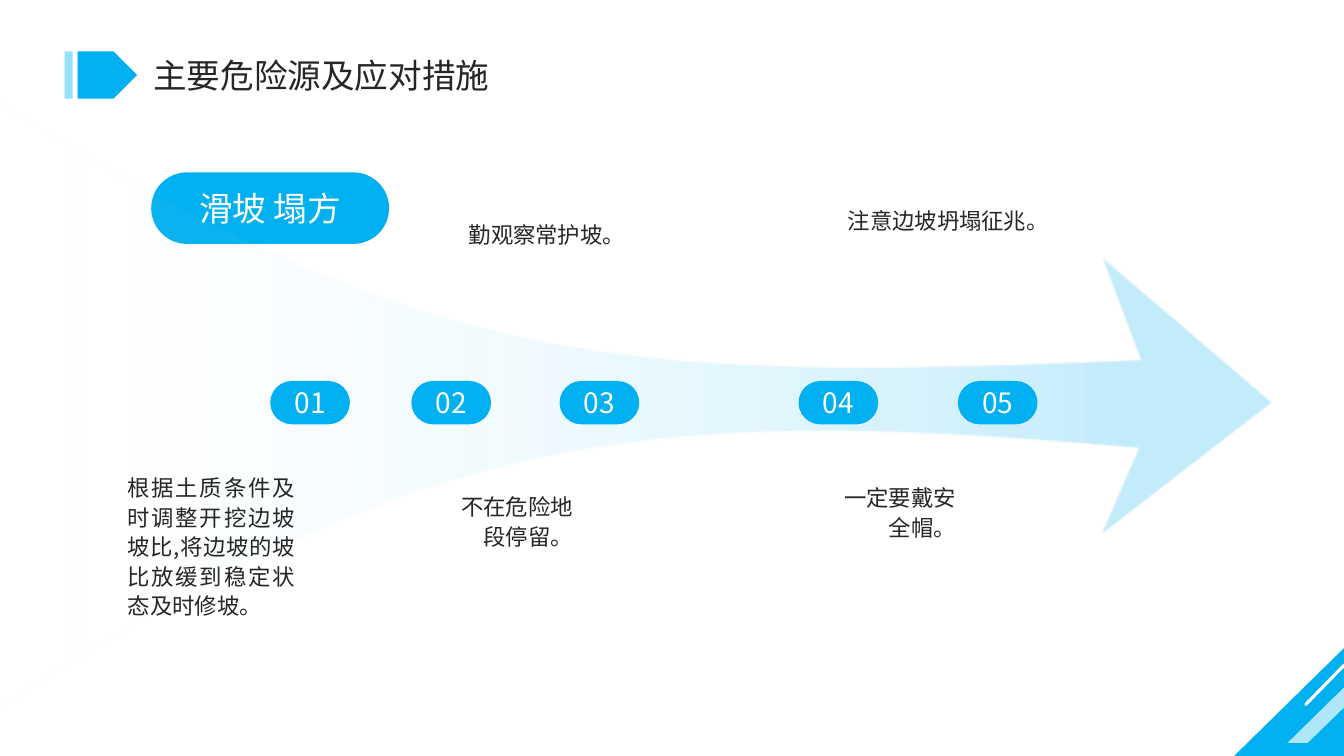
"""Builds the slide on landslide hazards and their countermeasures."""
from lxml.etree import SubElement
from pptx import Presentation
from pptx.dml.color import RGBColor
from pptx.enum.shapes import MSO_CONNECTOR, MSO_SHAPE as SHAPE
from pptx.enum.text import MSO_ANCHOR as ANCHOR, MSO_AUTO_SIZE as AUTO_SIZE, PP_ALIGN as ALIGN
from pptx.oxml.ns import qn
from pptx.util import Inches, Pt

FONT = "Noto Sans CJK SC"
BLUE, PALE_BLUE, WHITE, DARK = "00B0F0", "93E2FF", "FFFFFF", "262626"


def paint(shape, color):
    shape.shadow.inherit = False
    shape.fill.solid()
    shape.fill.fore_color.rgb = RGBColor.from_string(color)
    shape.line.fill.background()


def write(shape, text, size, color, align, anchor=ANCHOR.TOP, spacing=1.0):
    frame = shape.text_frame
    frame.text = text
    frame.word_wrap = True
    frame.vertical_anchor = anchor
    frame.auto_size = AUTO_SIZE.NONE
    paragraph = frame.paragraphs[0]
    paragraph.alignment = align
    paragraph.line_spacing = spacing
    run = paragraph.runs[0]
    run.font.size = Pt(size)
    run.font.name = FONT
    run.font.color.rgb = RGBColor.from_string(color)
    SubElement(run.font._element, qn("a:ea"), typeface=FONT)


presentation = Presentation()
presentation.slide_width, presentation.slide_height = Inches(13.33), Inches(7.5)
slide = presentation.slides.add_slide(presentation.slide_layouts[5])
shapes = slide.shapes

decorations = [
    (SHAPE.ISOSCELES_TRIANGLE, 12.24, 6.43, 1.09, 1.07, BLUE),
    (SHAPE.PENTAGON, 0.77, 0.51, 0.59, 0.47, BLUE),
    (SHAPE.RECTANGLE, 0.64, 0.51, 0.08, 0.47, PALE_BLUE),
]
for kind, left, top, width, height, color in decorations:
    shape = shapes.add_shape(kind, Inches(left), Inches(top), Inches(width), Inches(height))
    paint(shape, color)
    if kind == SHAPE.ISOSCELES_TRIANGLE:
        shape.adjustments[0] = 1

builder = shapes.build_freeform(Inches(13.33), Inches(6.82))
builder.add_line_segments([(Inches(x), Inches(y)) for x, y in [(13.33, 7.02), (12.97, 7.37), (12.77, 7.37)]])
stripe = builder.convert_to_shape()
paint(stripe, WHITE)
stripe_color = next(stripe.element.spPr.iter(qn("a:srgbClr")))
SubElement(stripe_color, qn("a:alpha"), val="69000")

corner_line = shapes.add_connector(
    MSO_CONNECTOR.STRAIGHT, Inches(13.33), Inches(6.6), Inches(12.95), Inches(6.99))
corner_line.line.width = Pt(2.25)
corner_line.line.color.rgb = RGBColor.from_string(WHITE)
corner_line.element.spPr.find(qn("a:ln")).set("cap", "rnd")
SubElement(corner_line.element.spPr, qn("a:effectLst"))

title = shapes.title
title.left, title.top, title.width, title.height = Inches(1.42), Inches(0.49), Inches(4), Inches(0.5)
write(title, "主要危险源及应对措施", 24, DARK, ALIGN.LEFT)

topic = shapes.add_shape(SHAPE.ROUNDED_RECTANGLE, Inches(1.5), Inches(1.71), Inches(2.36), Inches(0.71))
topic.adjustments[0] = 0.5
paint(topic, BLUE)
write(topic, "滑坡 塌方", 24, WHITE, ALIGN.CENTER, ANCHOR.MIDDLE)

upper_edge = [(-0.42, 0.76), (4.2, 3.71), (6.05, 3.8), (11.32, 3.58)]
arrow_head = [(10.94, 2.57), (12.61, 4), (10.93, 5.3)]
lower_edge = [(11.3, 4.45), (6.22, 4), (4.12, 4.28), (-0.41, 7.29)]
curves = []
for edge in (upper_edge, lower_edge):
    curve = []
    for step in range(41):
        t = step / 40
        weights = ((1 - t) ** 3, 3 * t * (1 - t) ** 2, 3 * t ** 2 * (1 - t), t ** 3)
        curve.append(tuple(sum(w * point[axis] for w, point in zip(weights, edge)) for axis in (0, 1)))
    curves.append(curve)
outline = [(Inches(x), Inches(y)) for x, y in curves[0] + arrow_head + curves[1]]
builder = shapes.build_freeform(*outline[0])
builder.add_line_segments(outline[1:])
arrow = builder.convert_to_shape()
paint(arrow, WHITE)
arrow.fill.gradient()
arrow.fill.gradient_angle = 0
for stop, position, color in zip(arrow.fill.gradient_stops, (0, 0.89), (WHITE, BLUE)):
    stop.position = position
    stop.color.rgb = RGBColor.from_string(color)
gradient_colors = list(arrow.element.spPr.iter(qn("a:srgbClr")))
for gradient_color, alpha in zip(gradient_colors, ("0", "23000")):
    SubElement(gradient_color, qn("a:alpha"), val=alpha)

for number, left in enumerate((2.68, 4.08, 5.55, 7.92, 9.5), start=1):
    badge = shapes.add_shape(SHAPE.ROUNDED_RECTANGLE, Inches(left), Inches(3.78), Inches(0.79), Inches(0.43))
    badge.adjustments[0] = 0.5
    paint(badge, BLUE)
    write(badge, f"{number:02}", 20, WHITE, ALIGN.CENTER, ANCHOR.MIDDLE)

measures = [
    (1.17, 4.63, 1.85, 1.58, ALIGN.JUSTIFY, "根据土质条件及时调整开挖边坡坡比,将边坡的坡比放缓到稳定状态及时修坡。"),
    (4.55, 2.12, 2.35, 0.4, ALIGN.LEFT, "勤观察常护坡。"),
    (4.32, 4.82, 1.46, 0.69, ALIGN.RIGHT, "不在危险地段停留。"),
    (8.31, 1.98, 2.23, 0.4, ALIGN.LEFT, "注意边坡坍塌征兆。"),
    (8.12, 4.73, 1.46, 0.69, ALIGN.RIGHT, "一定要戴安全帽。"),
]
for left, top, width, height, align, text in measures:
    box = shapes.add_textbox(Inches(left), Inches(top), Inches(width), Inches(height))
    write(box, text, 16, DARK, align, spacing=1.1)

presentation.save("out.pptx")
